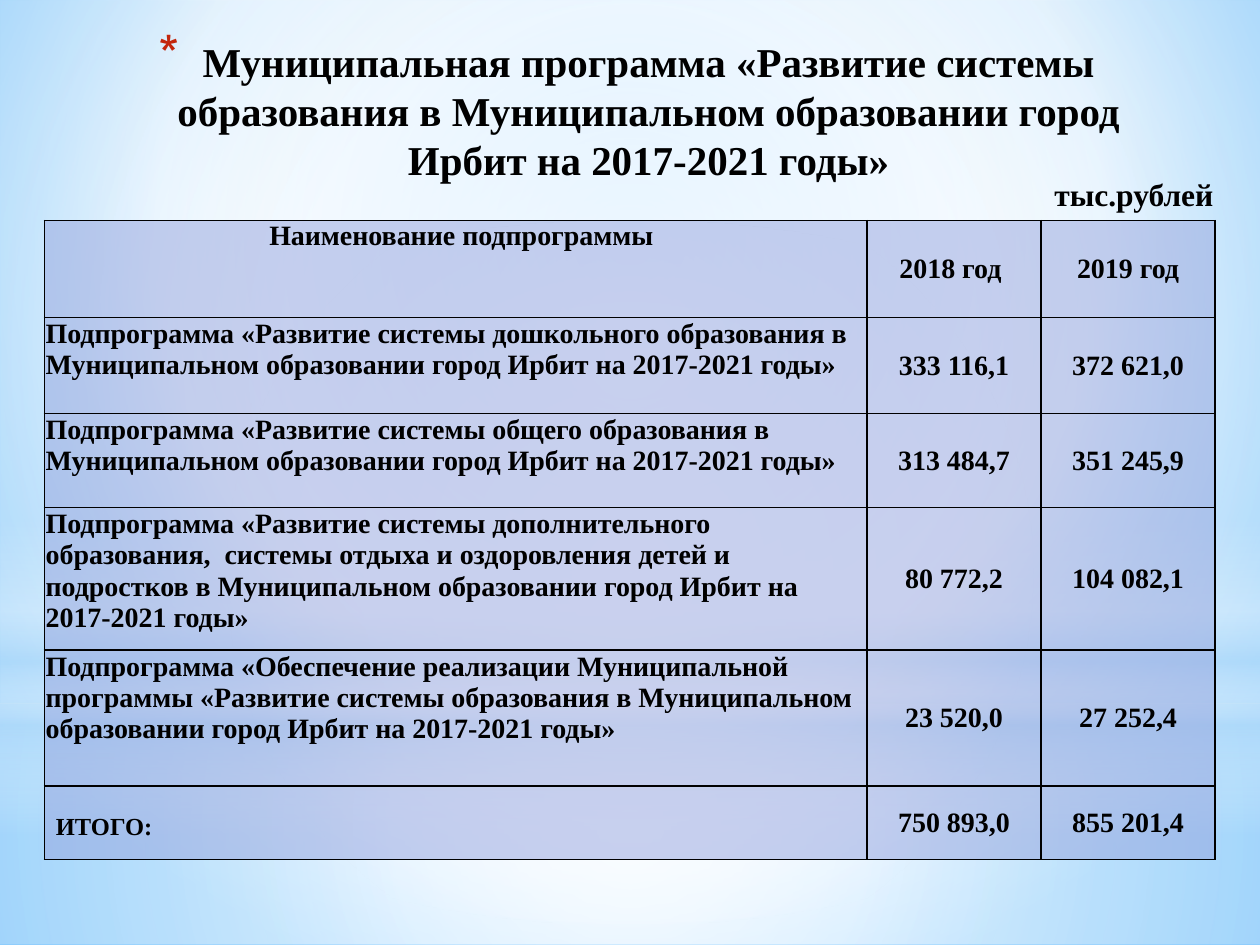
"""Build the slide on the education programme funding table."""
from lxml.etree import SubElement
from pptx import Presentation
from pptx.dml.color import RGBColor
from pptx.enum.shapes import MSO_SHAPE as Shape
from pptx.enum.text import MSO_ANCHOR as Anchor, PP_ALIGN as Align
from pptx.oxml.ns import qn
from pptx.util import Pt

COLORS = {"text": "000000", "bullet": "C3260C", "cell": "95A4DE", "white": "FFFFFF",
          "mist": "B4DCFA", "sky": "9ED5FF", "azure": "5BB9FF"}
FONT = "Times New Roman"
CENTER = (50, 50, 50, 50)
COLUMNS = (470, 99.5, 99.5)
ROW_HEIGHTS = (55.4, 55, 53.7, 81.3, 77.7, 42)
ROWS = (
    ("Наименование подпрограммы", "2018 год ", "2019 год"),
    ("Подпрограмма «Развитие системы дошкольного образования в Муниципальном "
     "образовании город Ирбит на 2017-2021 годы»", "333 116,1", "372 621,0"),
    ("Подпрограмма «Развитие системы общего образования в Муниципальном "
     "образовании город Ирбит на 2017-2021 годы»", "313 484,7", "351 245,9"),
    ("Подпрограмма «Развитие системы дополнительного образования,  системы отдыха "
     "и оздоровления детей и подростков в Муниципальном образовании город Ирбит "
     "на 2017-2021 годы»", "80 772,2", "104 082,1"),
    ("Подпрограмма «Обеспечение реализации Муниципальной программы «Развитие "
     "системы образования в Муниципальном образовании город Ирбит на 2017-2021 "
     "годы»", "23 520,0", "27 252,4"),
    ("ИТОГО:", "750 893,0", "855 201,4"),
)


def add_node(parent, tag, **attributes):
    """Append a DrawingML element with the given attributes."""
    return SubElement(parent, qn(f"a:{tag}"),
                      {name: str(value) for name, value in attributes.items()})


def paint_gradient(owner, fill, stops, center=None):
    """Give a fill colour stops, circular around a centre or running downwards."""
    fill.gradient()
    gradient = owner._element.find(f".//{qn('a:gradFill')}")
    for child in list(gradient):
        gradient.remove(child)
    stop_list = add_node(gradient, "gsLst")
    for position, color, alpha in stops:
        stop = add_node(stop_list, "gs", pos=position * 1000)
        tint = add_node(stop, "srgbClr", val=COLORS[color])
        if alpha < 100:
            add_node(tint, "alpha", val=alpha * 1000)
    if center:
        route = add_node(gradient, "path", path="circle")
        add_node(route, "fillToRect",
                 **{side: share * 1000 for side, share in zip("ltrb", center)})
    else:
        add_node(gradient, "lin", ang=90 * 60000, scaled=0)


def add_glow(page, kind, top, height, stops, center=None):
    """Add a full-width translucent gradient shape."""
    shape = page.shapes.add_shape(kind, Pt(0), Pt(top), Pt(720), Pt(height))
    shape.shadow.inherit = False
    shape.line.fill.background()
    paint_gradient(shape, shape.fill, stops, center)


def add_span(para, text, size):
    """Add one bold black run."""
    span = para.add_run()
    span.text = text
    span.font.name, span.font.size, span.font.bold = FONT, Pt(size), True
    span.font.color.rgb = RGBColor.from_string(COLORS["text"])


def add_text(page, left, top, width, height, text, size, align):
    """Add a wrapping text box with one paragraph and return the box."""
    box = page.shapes.add_textbox(Pt(left), Pt(top), Pt(width), Pt(height))
    box.text_frame.word_wrap = True
    para = box.text_frame.paragraphs[0]
    para.alignment = align
    add_span(para, text, size)
    return box


def add_title(page):
    """Add the centred title with its red asterisk bullet."""
    box = add_text(page, 34, 16.5, 648, 90, "Муниципальная программа «Развитие системы "
                   "образования в Муниципальном образовании город Ирбит на 2017-2021 годы»",
                   23.4, Align.CENTER)
    box.text_frame.margin_top = Pt(4.5)
    para = box.text_frame.paragraphs[0]
    para.line_spacing = Pt(28)
    properties = para._p.get_or_add_pPr()
    properties.set("marL", str(Pt(25.2)))
    properties.set("indent", str(-Pt(25.2)))
    tint = add_node(properties, "buClr")
    add_node(tint, "srgbClr", val=COLORS["bullet"])
    add_node(properties, "buSzPct", val=128000)
    add_node(properties, "buChar", char="*")


def style_cell(cell):
    """Set black borders and a half-transparent fill."""
    properties = cell._tc.get_or_add_tcPr()
    for side in "LRTB":
        line = add_node(properties, f"ln{side}", w=Pt(1))
        add_node(add_node(line, "solidFill"), "srgbClr", val=COLORS["text"])
    cell.fill.solid()
    cell.fill.fore_color.rgb = RGBColor.from_string(COLORS["cell"])
    tint = properties.find(f"{qn('a:solidFill')}/{qn('a:srgbClr')}")
    add_node(tint, "alpha", val=50000)


def add_funding_table(page):
    """Add the table of subprogrammes and yearly sums."""
    table = page.shapes.add_table(len(ROWS), len(COLUMNS), Pt(25.4), Pt(126),
                                  Pt(sum(COLUMNS)), Pt(sum(ROW_HEIGHTS))).table
    for column, width in zip(table.columns, COLUMNS):
        column.width = Pt(width)
    last = len(ROWS) - 1
    for row, (height, texts) in enumerate(zip(ROW_HEIGHTS, ROWS)):
        table.rows[row].height = Pt(height)
        for column, text in enumerate(texts):
            cell = table.cell(row, column)
            style_cell(cell)
            inset = 0.7 if 0 < row < last else 0
            cell.margin_left = cell.margin_right = cell.margin_top = Pt(inset)
            cell.margin_bottom = Pt(0)
            cell.vertical_anchor = Anchor.MIDDLE if column else Anchor.TOP
            para = cell.text_frame.paragraphs[0]
            para.alignment = Align.CENTER if column or row == 0 else Align.LEFT
            is_total = row == last and column == 0
            if column == 0 and row in (0, last):
                cell.margin_left = Pt(6.5)
            if is_total:
                cell.margin_top = Pt(16)
            add_span(para, text, 14 if is_total else 16)


def main():
    """Assemble the slide and save it."""
    deck = Presentation()
    deck.slide_width, deck.slide_height = Pt(720), Pt(540)
    page = deck.slides.add_slide(deck.slide_layouts[6])
    paint_gradient(page, page.background.fill,
                   [(0, "sky", 100), (60, "white", 100), (100, "azure", 100)],
                   (20, 10, 20, 60))
    add_glow(page, Shape.RECTANGLE, 402, 138,
             [(0, "white", 91), (37, "white", 76), (100, "mist", 79)], CENTER)
    add_glow(page, Shape.RECTANGLE, 0, 402,
             [(0, "white", 89), (48, "white", 62), (100, "mist", 79)], CENTER)
    add_glow(page, Shape.RECTANGLE, 297, 180,
             [(0, "white", 0), (29, "white", 30), (45, "mist", 40),
              (55, "white", 26), (65, "mist", 60), (100, "white", 0)])
    add_glow(page, Shape.OVAL, 126, 402, [(0, "white", 100), (56, "white", 0)], CENTER)
    add_title(page)
    add_funding_table(page)
    add_text(page, 592.5, 96.5, 108, 29, "тыс.рублей", 18, Align.RIGHT)
    deck.save("out.pptx")


if __name__ == "__main__":
    main()
